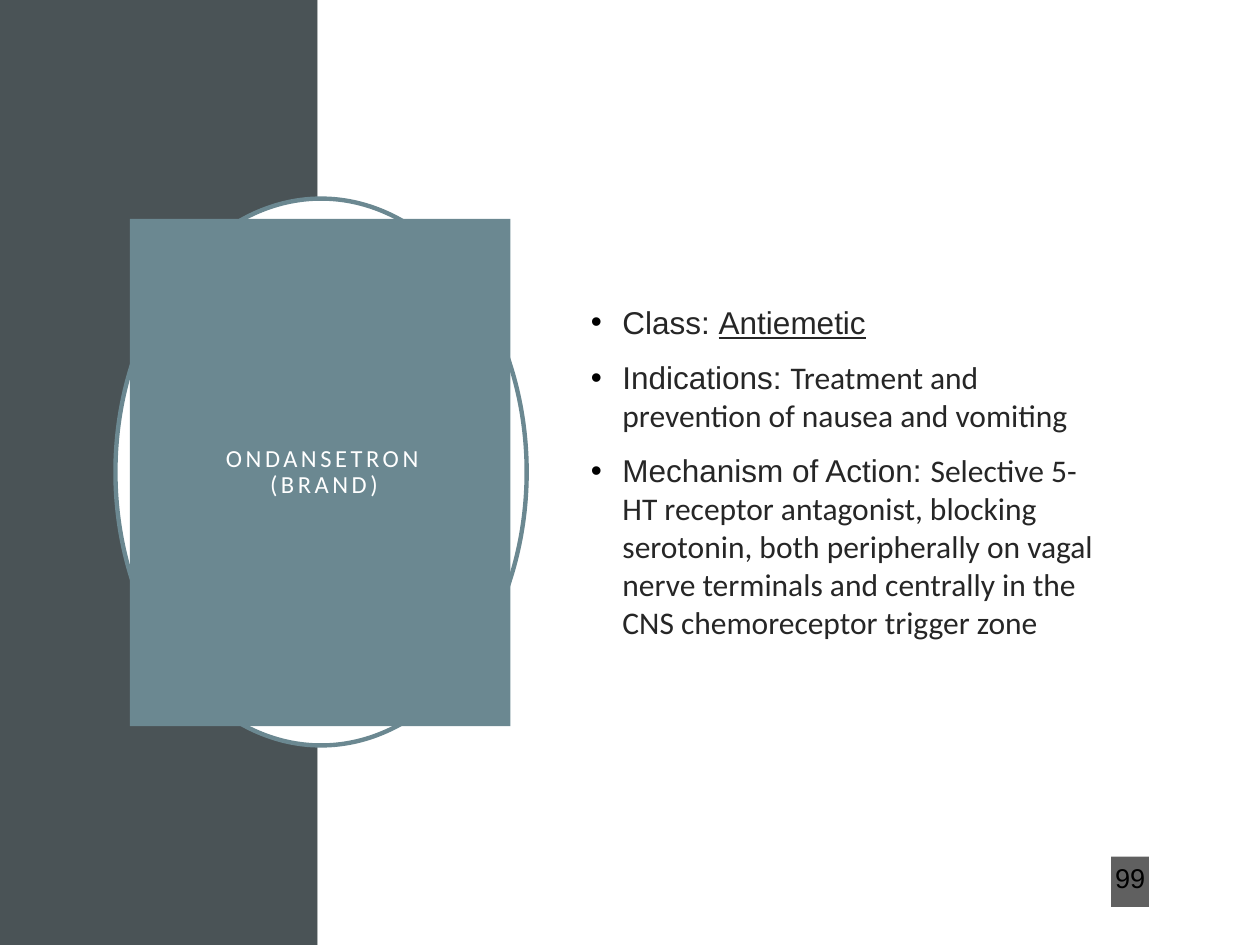
from dataclasses import dataclass

from lxml.etree import SubElement
from pptx import Presentation
from pptx.dml.color import RGBColor
from pptx.enum.shapes import MSO_SHAPE
from pptx.enum.text import MSO_ANCHOR, MSO_AUTO_SIZE, PP_ALIGN
from pptx.oxml.ns import qn
from pptx.util import Pt


@dataclass(frozen=True)
class Theme:
    panel: str = "4A5356"
    accent: str = "6B8891"
    white: str = "FFFFFF"
    black: str = "000000"
    text: str = "262626"
    badge: str = "1D1D1D"
    title_size: float = 14
    body_size: float = 18
    number_size: float = 15.5
    heading_font: str = "Arial"
    text_font: str = "Calibri"


THEME = Theme()
WIDTH, HEIGHT = 720, 540
PANEL_WIDTH = 181.5

# Each bullet: label, content, format of the content
BULLETS = [
    ("Class: ", "Antiemetic", {"name": THEME.heading_font, "underline": True}),
    ("Indications: ", "Treatment and prevention of nausea and vomiting",
     {"name": THEME.text_font}),
    ("Mechanism of Action: ",
     "Selective 5-HT receptor antagonist, blocking serotonin, both "
     "peripherally on vagal nerve terminals and centrally in the CNS "
     "chemoreceptor trigger zone", {"name": THEME.text_font}),
]


def set_values(target, values):
    for name, value in values.items():
        setattr(target, name, value)


def place(shape, left, top, width, height):
    set_values(shape, {"left": Pt(left), "top": Pt(top),
                       "width": Pt(width), "height": Pt(height)})


def paint(shape, color):
    shape.fill.solid()
    shape.fill.fore_color.rgb = RGBColor.from_string(color)


def add_shape(slide, kind, bounds, fill, line=None):
    shape = slide.shapes.add_shape(kind, *map(Pt, bounds))
    shape.shadow.inherit = False
    paint(shape, fill)
    if line:
        shape.line.color.rgb = RGBColor.from_string(line)
        shape.line.width = Pt(2.5)
    else:
        shape.line.fill.background()
    return shape


def set_frame(frame, left, top, right, bottom):
    set_values(frame, {
        "margin_left": Pt(left), "margin_top": Pt(top),
        "margin_right": Pt(right), "margin_bottom": Pt(bottom),
        "vertical_anchor": MSO_ANCHOR.MIDDLE, "word_wrap": True,
        "auto_size": MSO_AUTO_SIZE.NONE})


def format_font(font, color, **values):
    set_values(font, values)
    font.color.rgb = RGBColor.from_string(color)


def add_bullet(para):
    properties = para._p.get_or_add_pPr()
    properties.set("marL", str(Pt(18)))
    properties.set("indent", str(-Pt(18)))
    color = SubElement(properties, qn("a:buClr"))
    SubElement(color, qn("a:srgbClr"), val=THEME.black)
    SubElement(properties, qn("a:buFont"), typeface=THEME.heading_font)
    SubElement(properties, qn("a:buChar"), char="•")


def fill_title(title):
    place(title, 74.2, 125, 217.5, 290)
    paint(title, THEME.accent)
    frame = title.text_frame
    set_frame(frame, 14.4, 14.4, 10, 14.4)
    frame.text = "ONDANSETRON\v(BRAND)"
    para = frame.paragraphs[0]
    set_values(para, {"alignment": PP_ALIGN.CENTER, "line_spacing": 0.9})
    for span in para.runs:
        format_font(span.font, THEME.white, name=THEME.text_font,
                    size=Pt(THEME.title_size))
        span.font._element.set("spc", "200")


def fill_body(body):
    place(body, 330.5, 110, 314, 319)
    frame = body.text_frame
    set_frame(frame, 7.2, 3.6, 10, 3.6)
    for index, (label, content, content_format) in enumerate(BULLETS):
        para = frame.add_paragraph() if index else frame.paragraphs[0]
        add_bullet(para)
        set_values(para, {"space_before": Pt(10 if index else 0),
                          "line_spacing": 1.0})
        for text, values in ((label, {"name": THEME.heading_font}),
                             (content, content_format)):
            span = para.add_run()
            span.text = text
            format_font(span.font, THEME.text, size=Pt(THEME.body_size), **values)


def add_number(slide, text):
    box = add_shape(slide, MSO_SHAPE.RECTANGLE, (635, 489.5, 21.6, 28.8), THEME.badge)
    color = box.fill._xPr.find(qn("a:solidFill"))[0]
    SubElement(color, qn("a:alpha"), val="70000")
    set_frame(box.text_frame, 1.4, 3.6, 1.4, 3.6)
    para = box.text_frame.paragraphs[0]
    set_values(para, {"alignment": PP_ALIGN.CENTER, "line_spacing": 0.7,
                      "space_after": Pt(6)})
    span = para.add_run()
    span.text = text
    format_font(span.font, THEME.black, name=THEME.heading_font,
                size=Pt(THEME.number_size))


def main():
    deck = Presentation()
    set_values(deck, {"slide_width": Pt(WIDTH), "slide_height": Pt(HEIGHT)})
    slide = deck.slides.add_slide(deck.slide_layouts[1])
    title, body = slide.placeholders

    # Background panels and ring
    add_shape(slide, MSO_SHAPE.RECTANGLE, (0, 0, PANEL_WIDTH, HEIGHT), THEME.panel)
    add_shape(slide, MSO_SHAPE.RECTANGLE,
              (PANEL_WIDTH, 0, WIDTH - PANEL_WIDTH, HEIGHT), THEME.white)
    add_shape(slide, MSO_SHAPE.OVAL, (66, 113.5, 235, 312.5), THEME.white, THEME.accent)

    # Title and list, brought in front of the panels
    for placeholder, fill in ((title, fill_title), (body, fill_body)):
        fill(placeholder)
        slide.shapes._spTree.append(placeholder._element)

    # Slide number
    add_number(slide, "99")
    deck.save("out.pptx")


if __name__ == "__main__":
    main()
